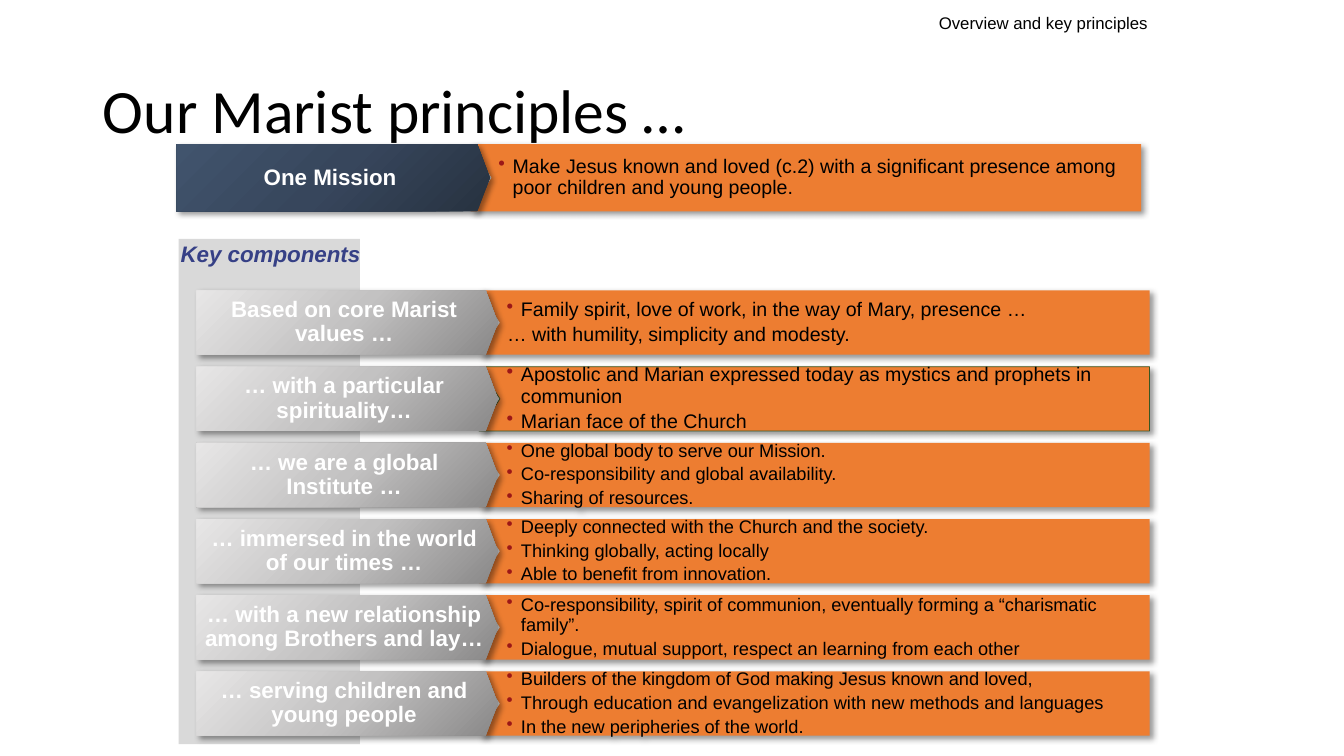
from dataclasses import dataclass

import pptx
import pptx.dml.color
import pptx.enum.shapes
import pptx.enum.text
import pptx.oxml
import pptx.oxml.ns
import pptx.util
from pptx.util import Cm, Pt

ALIGN = pptx.enum.text.PP_ALIGN
ANCHOR = pptx.enum.text.MSO_ANCHOR
AUTO_SIZE = pptx.enum.text.MSO_AUTO_SIZE
SHAPES = pptx.enum.shapes.MSO_SHAPE


@dataclass(frozen=True)
class Theme:
    heading_font: str = "Calibri"
    font: str = "Arial"
    text: str = "000000"
    label_text: str = "FFFFFF"
    accent: str = "364086"
    bullet: str = "9B1717"
    bar: str = "ED7D31"
    bar_outline: str = "385723"
    panel: str = "D9D9D9"
    grey: tuple = ("898888", "C3C2C2", "E7E6E6")
    navy: tuple = ("273240", "37465C", "41546D")
    title_size: int = 44
    label_size: int = 16
    detail_size: int = 14
    dense_size: int = 13
    header_size: int = 12


THEME = Theme()

MISSION = ("Make Jesus known and loved (c.2) with a significant presence "
           "among poor children and young people.")

# Label, detail size, details; a detail that opens with "…" has no bullet.
COMPONENTS = [
    ("Based on core Marist values …", THEME.detail_size,
     ["Family spirit, love of work, in the way of Mary, presence …",
      "… with humility, simplicity and modesty."]),
    ("… with a particular spirituality…", THEME.detail_size,
     ["Apostolic and Marian expressed today as mystics and prophets in communion",
      "Marian face of the Church"]),
    ("… we are a global Institute …", THEME.dense_size,
     ["One global body to serve our Mission.",
      "Co-responsibility and global availability.",
      "Sharing of resources."]),
    ("… immersed in the world of our times …", THEME.dense_size,
     ["Deeply connected with the Church and the society.",
      "Thinking globally, acting locally",
      "Able to benefit from innovation."]),
    ("… with a new relationship among Brothers and lay…", THEME.dense_size,
     ["Co-responsibility, spirit of communion, eventually forming a “charismatic family”.",
      "Dialogue, mutual support, respect an learning from each other"]),
    ("… serving children and young people", THEME.dense_size,
     ["Builders of the kingdom of God making Jesus known and loved,",
      "Through education and evangelization with new methods and languages",
      "In the new peripheries of the world."]),
]
OUTLINED_ROW = 1
FIRST_ROW_TOP, ROW_PITCH, ROW_HEIGHT = 7.32, 1.92, 1.62


def rgb(value):
    return pptx.dml.color.RGBColor.from_string(value)


def xml(markup):
    namespace = pptx.oxml.ns.nsdecls("a")
    return pptx.oxml.parse_xml(markup.replace(">", f" {namespace}>", 1))


def write(paragraph, wording, size, color=THEME.text, font=THEME.font,
          bold=False, italic=False, align=ALIGN.LEFT, before=0):
    paragraph.alignment = align
    paragraph.line_spacing = 0.9
    paragraph.space_before = Pt(before)
    run = paragraph.add_run()
    run.text = wording
    run.font.name = font
    run.font.size = Pt(size)
    run.font.bold = bold
    run.font.italic = italic
    run.font.color.rgb = rgb(color)


def indent(paragraph, bulleted):
    properties = paragraph._p.get_or_add_pPr()
    properties.set("marL", str(Cm(0.86 if bulleted else 0.51)))
    properties.set("indent", str(Cm(-0.36 if bulleted else 0)))
    if bulleted:
        properties.append(xml(f'<a:buClr><a:srgbClr val="{THEME.bullet}"/></a:buClr>'))
        properties.append(xml('<a:buChar char="•"></a:buChar>'))


def cast_shadow(shape):
    shape.shadow.inherit = False
    effects = shape._element.spPr.find(pptx.oxml.ns.qn("a:effectLst"))
    effects.append(xml(
        f'<a:outerShdw blurRad="{Pt(4)}" dist="{Pt(3)}" dir="2700000" algn="tl" '
        'rotWithShape="0"><a:srgbClr val="000000"><a:alpha val="40000"/>'
        '</a:srgbClr></a:outerShdw>'))


def fill_gradient(shape, colors):
    """Blend three colours from the bottom right to the top left."""
    shape.fill.gradient()
    gradient = shape._element.spPr.find(pptx.oxml.ns.qn("a:gradFill"))
    for child in list(gradient):
        gradient.remove(child)
    stops = "".join(f'<a:gs pos="{50000 * i}"><a:srgbClr val="{color}"/></a:gs>'
                    for i, color in enumerate(colors))
    gradient.append(xml(f"<a:gsLst>{stops}</a:gsLst>"))
    gradient.append(xml('<a:lin ang="13500000" scaled="0"></a:lin>'))


def prepare_frame(frame, inset):
    frame.word_wrap = True
    frame.vertical_anchor = ANCHOR.MIDDLE
    frame.margin_left = frame.margin_right = Cm(inset)
    frame.margin_top = frame.margin_bottom = Cm(inset)


def add_detail_bar(slide, left, top, width, height, details, size,
                   before=3, outlined=False):
    """Draw a bar with a notch pushed into its left side, holding a list."""
    right, bottom, notch = left + width, top + height, left + 0.53
    builder = slide.shapes.build_freeform(Cm(left), Cm(top))
    builder.add_line_segments([
        (Cm(notch), Cm(top + height / 2)), (Cm(left), Cm(bottom)),
        (Cm(right), Cm(bottom)), (Cm(right), Cm(top))])
    bar = builder.convert_to_shape()
    bar.fill.solid()
    bar.fill.fore_color.rgb = rgb(THEME.bar)
    if outlined:
        bar.line.color.rgb = rgb(THEME.bar_outline)
        bar.line.width = Pt(0.5)
    else:
        bar.line.fill.background()
    cast_shadow(bar)
    frame = bar.text_frame
    prepare_frame(frame, 0.2)
    for i, detail in enumerate(details):
        paragraph = frame.add_paragraph() if i else frame.paragraphs[0]
        write(paragraph, detail, size, before=before)
        indent(paragraph, bulleted=not detail.startswith("…"))


def add_label(slide, left, top, width, height, wording, colors):
    label = slide.shapes.add_shape(
        SHAPES.PENTAGON, Cm(left), Cm(top), Cm(width), Cm(height))
    label.adjustments[0] = 0.19
    fill_gradient(label, colors)
    label.line.fill.background()
    cast_shadow(label)
    prepare_frame(label.text_frame, 0.2)
    write(label.text_frame.paragraphs[0], wording, THEME.label_size,
          THEME.label_text, bold=True, align=ALIGN.CENTER, before=9)


def add_caption(slide, left, top, width, height, wording, size, **style):
    caption = slide.shapes.add_textbox(Cm(left), Cm(top), Cm(width), Cm(height))
    frame = caption.text_frame
    prepare_frame(frame, 0)
    frame.vertical_anchor = ANCHOR.TOP
    frame.word_wrap = False
    frame.auto_size = AUTO_SIZE.SHAPE_TO_FIT_TEXT
    write(frame.paragraphs[0], wording, size, **style)


def add_panel(slide):
    panel = slide.shapes.add_shape(
        SHAPES.RECTANGLE, Cm(4.5), Cm(6.02), Cm(4.57), Cm(12.73))
    panel.fill.solid()
    panel.fill.fore_color.rgb = rgb(THEME.panel)
    panel.line.fill.background()
    panel.shadow.inherit = False


def set_title(slide, wording):
    title = slide.shapes.title
    title.left, title.top = Cm(2.34), Cm(1.02)
    title.width, title.height = Cm(29.21), Cm(3.68)
    title.text_frame.auto_size = AUTO_SIZE.NONE
    title.text_frame.vertical_anchor = ANCHOR.MIDDLE
    write(title.text_frame.paragraphs[0], wording, THEME.title_size,
          font=THEME.heading_font)


def main():
    deck = pptx.Presentation()
    deck.slide_width, deck.slide_height = Cm(33.87), Cm(19.05)
    slide = deck.slides.add_slide(deck.slide_layouts.get_by_name("Title Only"))

    set_title(slide, "Our Marist principles …")
    add_panel(slide)
    add_caption(slide, 4.55, 6.12, 4.6, 0.61, "Key components", THEME.label_size,
                color=THEME.accent, bold=True, italic=True, before=6)
    add_caption(slide, 23.62, 0.38, 5.31, 0.46, "Overview and key principles",
                THEME.header_size, align=ALIGN.RIGHT)

    for row, (label, size, details) in enumerate(COMPONENTS):
        top = FIRST_ROW_TOP + row * ROW_PITCH
        add_detail_bar(slide, 12.07, top, 16.9, ROW_HEIGHT, details, size,
                       outlined=row == OUTLINED_ROW)
        add_label(slide, 4.95, top, 7.6, ROW_HEIGHT, label, THEME.grey)

    add_detail_bar(slide, 11.86, 3.63, 16.9, 1.7, [MISSION], THEME.detail_size, before=9)
    add_label(slide, 4.45, 3.63, 7.9, 1.7, "One Mission", THEME.navy)

    deck.save("out.pptx")


if __name__ == "__main__":
    main()
